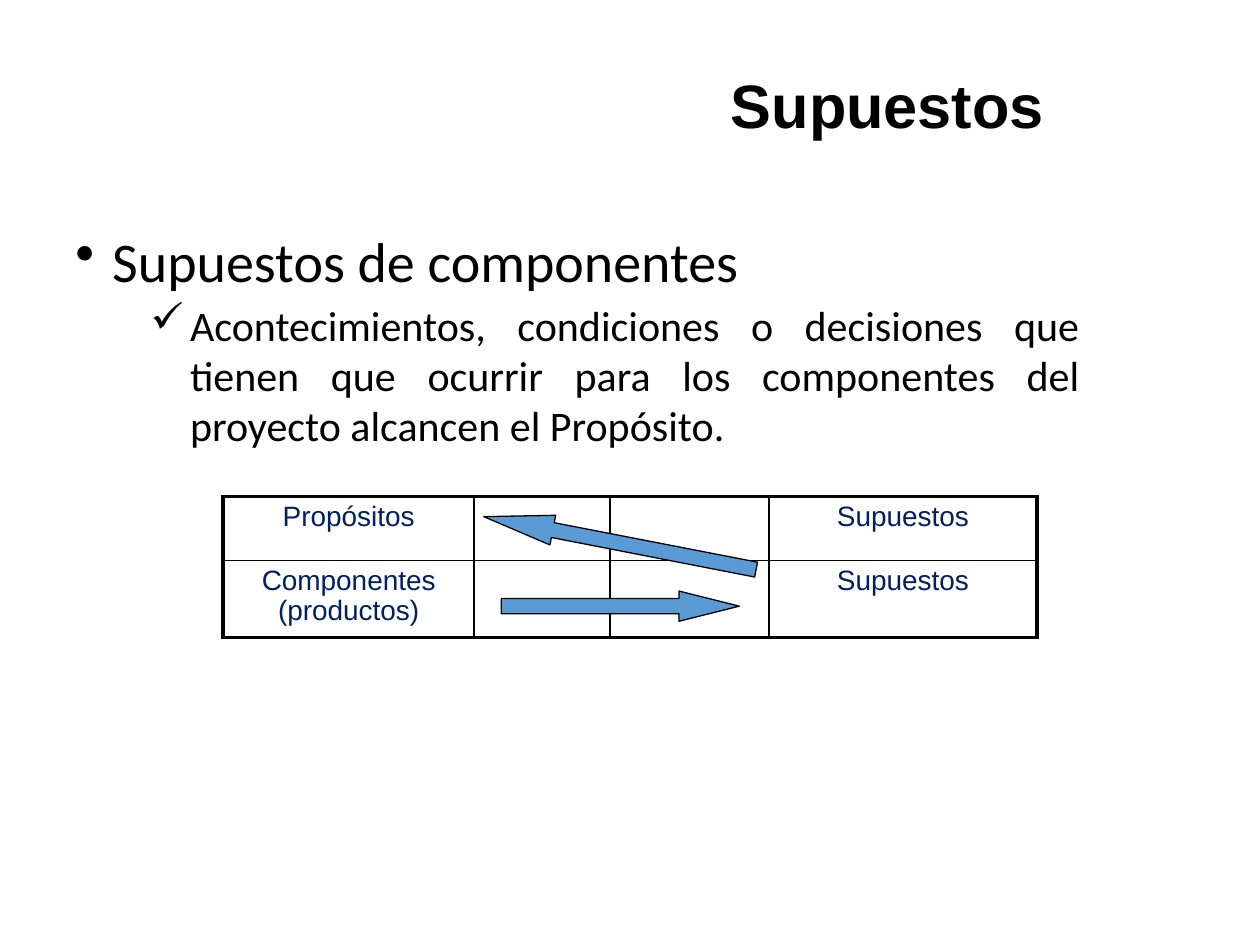
import pptx
import pptx.util
import pptx.dml.color
import pptx.enum.shapes
import pptx.enum.text
import pptx.oxml
import pptx.oxml.ns

Pt = pptx.util.Pt
ALIGN = pptx.enum.text.PP_ALIGN
SHAPE = pptx.enum.shapes.MSO_SHAPE
BLACK, NAVY, BLUE = "000000", "002060", "5B9BD5"


def color(value):
    return pptx.dml.color.RGBColor.from_string(value)


def set_font(paragraph, name, size, value, bold=False):
    font = paragraph.font
    font.name, font.size, font.bold = name, Pt(size), bold
    font.color.rgb = color(value)


def add_title(slide, left, top, width, height):
    title = slide.shapes.title
    title.left, title.top, title.width, title.height = map(Pt, (left, top, width, height))
    frame = title.text_frame
    frame.margin_left = frame.margin_right = frame.margin_top = frame.margin_bottom = 0
    frame.vertical_anchor = pptx.enum.text.MSO_ANCHOR.TOP
    frame.auto_size = pptx.enum.text.MSO_AUTO_SIZE.NONE
    frame.text = "Supuestos"
    heading = frame.paragraphs[0]
    heading.alignment = ALIGN.CENTER
    heading.line_spacing = 0.9
    heading.space_before = Pt(7.5)
    set_font(heading, "Arial", 35, BLACK, bold=True)


def set_bullet(paragraph, symbol, margin, hanging):
    properties = paragraph._p.get_or_add_pPr()
    properties.set("marL", str(Pt(margin)))
    properties.set("indent", str(-Pt(hanging)))
    bullet = pptx.oxml.parse_xml(
        f'<a:buChar {pptx.oxml.ns.nsdecls("a")} char="{symbol}"/>')
    properties.insert_element_before(bullet, "a:tabLst", "a:defRPr", "a:extLst")


def add_explanation(slide, left, top, width, height):
    points = [
        ("Supuestos de componentes", 0, 32, "•", 21, 21),
        ("Acontecimientos, condiciones o decisiones que tienen que ocurrir para "
         "los componentes del proyecto alcancen el Propósito.", 1, 24, "✓", 65.5, 22.5),
    ]
    frame = slide.shapes.add_textbox(*map(Pt, (left, top, width, height))).text_frame
    frame.word_wrap = True
    for index, (text, level, size, symbol, margin, hanging) in enumerate(points):
        point = frame.add_paragraph() if index else frame.paragraphs[0]
        point.text = text
        point.level = level
        point.alignment = ALIGN.JUSTIFY
        point.space_before = Pt(3)
        set_font(point, "Calibri", size, BLACK)
        set_bullet(point, symbol, margin, hanging)


def set_borders(cell, widths):
    properties = cell._tc.get_or_add_tcPr()
    for position, (side, width) in enumerate(widths.items()):
        border = pptx.oxml.parse_xml(
            f'<a:ln{side} {pptx.oxml.ns.nsdecls("a")} w="{Pt(width)}">'
            f'<a:solidFill><a:srgbClr val="{BLACK}"/></a:solidFill></a:ln{side}>')
        properties.insert(position, border)


def add_matrix(slide, left, top):
    rows = [("Propósitos", "", "", "Supuestos"),
            ("Componentes (productos)", "", "", "Supuestos")]
    widths = (143.5, 77.5, 91, 153)
    heights = (36.5, 43)
    matrix = slide.shapes.add_table(
        len(rows), len(widths), Pt(left), Pt(top), Pt(sum(widths)), Pt(sum(heights))).table
    matrix.first_row = matrix.horz_banding = False
    for column, width in zip(matrix.columns, widths):
        column.width = Pt(width)
    for r, (row, height) in enumerate(zip(rows, heights)):
        matrix.rows[r].height = Pt(height)
        for c, text in enumerate(row):
            cell = matrix.cell(r, c)
            cell.text = text
            cell.fill.background()
            label = cell.text_frame.paragraphs[0]
            label.alignment = ALIGN.CENTER
            label.line_spacing = 0.96
            set_font(label, "Arial", 16, NAVY)
            # Heavy outer frame, thin inner rules
            outer = {"L": c == 0, "R": c == len(row) - 1,
                     "T": r == 0, "B": r == len(rows) - 1}
            set_borders(cell, {side: 2.25 if edge else 1 for side, edge in outer.items()})


def add_arrow(slide, kind, left, top, width, head, rotation=0):
    arrow = slide.shapes.add_shape(kind, Pt(left), Pt(top), Pt(width), Pt(17.25))
    arrow.adjustments[0], arrow.adjustments[1] = 0.5, head
    arrow.rotation = rotation
    arrow.shadow.inherit = False
    arrow.fill.solid()
    arrow.fill.fore_color.rgb = color(BLUE)
    arrow.line.color.rgb = color(BLACK)
    arrow.line.width = Pt(0.75)


def add_logic_diagram(slide, left, top):
    add_matrix(slide, left, top)
    # Components meet their assumptions, which lead up to the purpose
    add_arrow(slide, SHAPE.RIGHT_ARROW, left + 159, top + 54, 136, 2)
    add_arrow(slide, SHAPE.LEFT_ARROW, left + 147.5, top + 18, 158.5, 2.33, rotation=11)


def main():
    presentation = pptx.Presentation()
    presentation.slide_width, presentation.slide_height = Pt(720), Pt(540)
    slide = presentation.slides.add_slide(presentation.slide_layouts[5])
    add_title(slide, 294.5, 43, 425.5, 28)
    add_explanation(slide, 36, 126, 588, 70.5)
    add_logic_diagram(slide, 127.5, 283.75)
    presentation.save("out.pptx")


if __name__ == "__main__":
    main()
